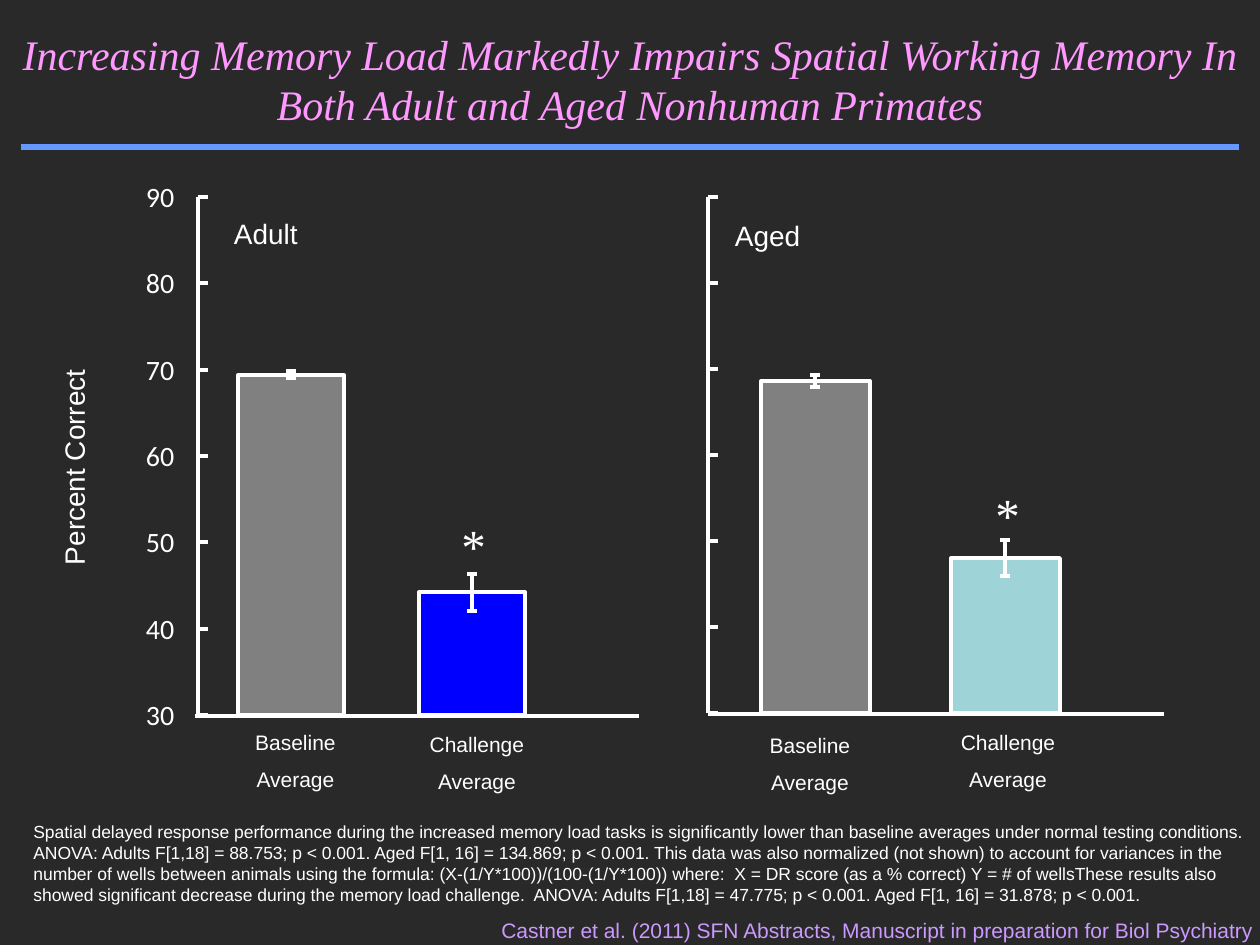
from dataclasses import dataclass

from pptx import Presentation
from pptx.dml.color import RGBColor
from pptx.enum.shapes import MSO_CONNECTOR, MSO_SHAPE
from pptx.enum.text import MSO_ANCHOR, MSO_AUTO_SIZE, PP_ALIGN
from pptx.oxml.ns import qn
from pptx.util import Emu, Pt

LEFT, CENTER = PP_ALIGN.LEFT, PP_ALIGN.CENTER
MIDDLE = MSO_ANCHOR.MIDDLE
GROW, FIXED = MSO_AUTO_SIZE.SHAPE_TO_FIT_TEXT, MSO_AUTO_SIZE.NONE
STRAIGHT, RECT = MSO_CONNECTOR.STRAIGHT, MSO_SHAPE.RECTANGLE

EMU_PER_PX = 914400 / 126
SLIDE_W, SLIDE_H = 1260, 945
AXIS_TOP, AXIS_MIN, AXIS_MAX, AXIS_STEP = 197, 30, 90, 10
TICK_LENGTH, CAP_HALF = 10, 5


@dataclass(frozen=True)
class Theme:
    """Colours, fonts, type sizes and line widths of the slide."""
    background: str = "292929"
    text: str = "FFFFFF"
    title: str = "FF99FF"
    rule: str = "6699FF"
    citation: str = "CC99FF"
    baseline: str = "808080"
    adult: str = "0000FF"
    aged: str = "9ED3D7"
    sans: str = "Arial"
    serif: str = "Times New Roman"
    numeral: str = "Calibri"
    title_size: int = 24
    star_size: int = 28
    label_size: int = 16
    small_size: int = 12
    note_size: int = 10
    rule_width: float = 3
    line_width: float = 2.25


THEME = Theme()

TITLE = ("Increasing Memory Load Markedly Impairs Spatial Working Memory In "
         "Both Adult and Aged Nonhuman Primates")
NOTE = (
    "Spatial delayed response performance during the increased memory load tasks is "
    "significantly lower than baseline averages under normal testing conditions.  "
    "ANOVA: Adults F[1,18] = 88.753; p < 0.001. Aged F[1, 16] = 134.869; p < 0.001. "
    "This data was also normalized (not shown) to account for variances in the number "
    "of wells between animals using the formula: (X-(1/Y*100))/(100-(1/Y*100)) where:  "
    "X = DR score (as a % correct) Y = # of wellsThese results also showed significant "
    "decrease during the memory load challenge.  ANOVA: Adults F[1,18] = 47.775; "
    "p < 0.001. Aged F[1, 16] = 31.878; p < 0.001.")
CITATION = ("Castner et al. (2011) SFN Abstracts, Manuscript in preparation "
            "for Biol Psychiatry")


@dataclass(frozen=True)
class Bar:
    """One mean with its error and the place of its label."""
    name: str
    value: float
    error: float
    left: int
    color: str
    label_box: tuple


@dataclass(frozen=True)
class Panel:
    """One bar graph: its axes, heading, bars and significance star."""
    heading: str
    heading_box: tuple
    axis_x: int
    axis_bottom: int
    base_line: tuple
    bar_width: int
    bars: tuple
    star_box: tuple

    def y(self, value):
        """Return the vertical place of a value."""
        scale = (self.axis_bottom - AXIS_TOP) / (AXIS_MAX - AXIS_MIN)
        return round(self.axis_bottom - (value - AXIS_MIN) * scale)


PANELS = (
    Panel("Adult", (234, 217, 72, 38), 198, 715, (195, 639, 716), 106,
          (Bar("Baseline", 69.4, 0.4, 238, THEME.baseline, (242, 723, 107, 76)),
           Bar("Challenge", 44.2, 2.1, 419, THEME.adult, (414, 725, 126, 76))),
          (449, 509, 49, 130)),
    Panel("Aged", (735, 219, 73, 38), 708, 713, (708, 1164, 714), 109,
          (Bar("Baseline", 68.6, 0.7, 761, THEME.baseline, (755, 726, 110, 76)),
           Bar("Challenge", 48, 2.1, 951, THEME.aged, (943, 723, 130, 76))),
          (983, 478, 49, 130)),
)


def px(n):
    """Turn pixels into EMU."""
    return Emu(round(n * EMU_PER_PX))


def rgb(color):
    """Turn a hex string into a colour."""
    return RGBColor.from_string(color)


def write(tf, text, *, size, font=THEME.sans, color=THEME.text,
          italic=False, align=LEFT):
    """Write each line of text as a formatted paragraph."""
    for i, line in enumerate(text.split("\n")):
        p = tf.add_paragraph() if i else tf.paragraphs[0]
        p.alignment = align
        if i:
            p.space_before = Pt(0.6 * size)
        r = p.add_run()
        r.text = line
        r.font.size = Pt(size)
        r.font.name = font
        r.font.italic = italic
        r.font.color.rgb = rgb(color)


def add_text(s, box, text, *, wrap=True, inset=True, rotation=0, **style):
    """Add a text box that grows with its text."""
    sp = s.shapes.add_textbox(*map(px, box))
    sp.rotation = rotation
    tf = sp.text_frame
    tf.word_wrap = wrap
    tf.auto_size = GROW
    if not inset:
        tf.margin_left = tf.margin_top = tf.margin_right = tf.margin_bottom = 0
    write(tf, text, **style)


def add_label(s, box, text, **style):
    """Add a tight one-line label."""
    add_text(s, box, text, wrap=False, inset=False, size=THEME.label_size, **style)


def add_line(s, x1, y1, x2, y2, color=THEME.text, width=THEME.line_width):
    """Add a straight line without a shadow."""
    sp = s.shapes.add_connector(STRAIGHT, *map(px, (x1, y1, x2, y2)))
    sp.line.color.rgb = rgb(color)
    sp.line.width = Pt(width)
    sp._element.spPr.append(sp._element.makeelement(qn("a:effectLst"), {}))


def add_title(s):
    """Fill the title placeholder and underline it."""
    sp = s.shapes.title
    sp.left, sp.top, sp.width, sp.height = map(px, (0, 0, SLIDE_W, 158))
    tf = sp.text_frame
    tf.word_wrap = True
    tf.auto_size = FIXED
    tf.vertical_anchor = MIDDLE
    write(tf, TITLE, size=THEME.title_size, font=THEME.serif,
          color=THEME.title, italic=True, align=CENTER)
    add_line(s, 21, 147, 1239, 147, THEME.rule, THEME.rule_width)


def add_bar(s, panel, bar):
    """Add a bar with its error bar and label."""
    top, width = panel.y(bar.value), panel.bar_width
    sp = s.shapes.add_shape(
        RECT, *map(px, (bar.left, top, width, panel.axis_bottom - top)))
    sp.shadow.inherit = False
    sp.fill.solid()
    sp.fill.fore_color.rgb = rgb(bar.color)
    sp.line.color.rgb = rgb(THEME.text)
    sp.line.width = Pt(THEME.line_width)
    mid = bar.left + width // 2
    for end in (bar.value + bar.error, bar.value - bar.error):
        add_line(s, mid, top, mid, panel.y(end))
        add_line(s, mid - CAP_HALF, panel.y(end), mid + CAP_HALF, panel.y(end))
    add_text(s, bar.label_box, f"{bar.name}\nAverage",
             size=THEME.small_size, align=CENTER)


def add_panel(s, panel):
    """Add one bar graph with its axes."""
    add_label(s, panel.heading_box, panel.heading)
    for bar in panel.bars:
        add_bar(s, panel, bar)
    x = panel.axis_x
    add_line(s, x, AXIS_TOP, x, panel.axis_bottom)
    for value in range(AXIS_MIN, AXIS_MAX + 1, AXIS_STEP):
        add_line(s, x, panel.y(value), x + TICK_LENGTH, panel.y(value))
    start, end, y = panel.base_line
    add_line(s, start, y, end, y)
    add_text(s, panel.star_box, "*", size=THEME.star_size, font=THEME.serif)


def add_scale(s, panel):
    """Add the axis title and the numbers beside the first graph."""
    add_label(s, (-34, 436, 220, 38), "Percent Correct", rotation=270)
    for value in range(AXIS_MIN, AXIS_MAX + 1, AXIS_STEP):
        add_label(s, (146, panel.y(value) - 17, 32, 38), str(value),
                  font=THEME.numeral)


def main():
    """Build the slide and save it."""
    prs = Presentation()
    prs.slide_width, prs.slide_height = px(SLIDE_W), px(SLIDE_H)
    s = prs.slides.add_slide(prs.slide_layouts.get_by_name("Title Only"))
    s.background.fill.solid()
    s.background.fill.fore_color.rgb = rgb(THEME.background)
    add_title(s)
    add_scale(s, PANELS[0])
    for panel in PANELS:
        add_panel(s, panel)
    add_text(s, (21, 815, 1239, 161), NOTE, size=THEME.note_size)
    add_text(s, (489, 911, 784, 38), CITATION, wrap=False,
             size=THEME.small_size, color=THEME.citation)
    prs.save("out.pptx")


if __name__ == "__main__":
    main()
